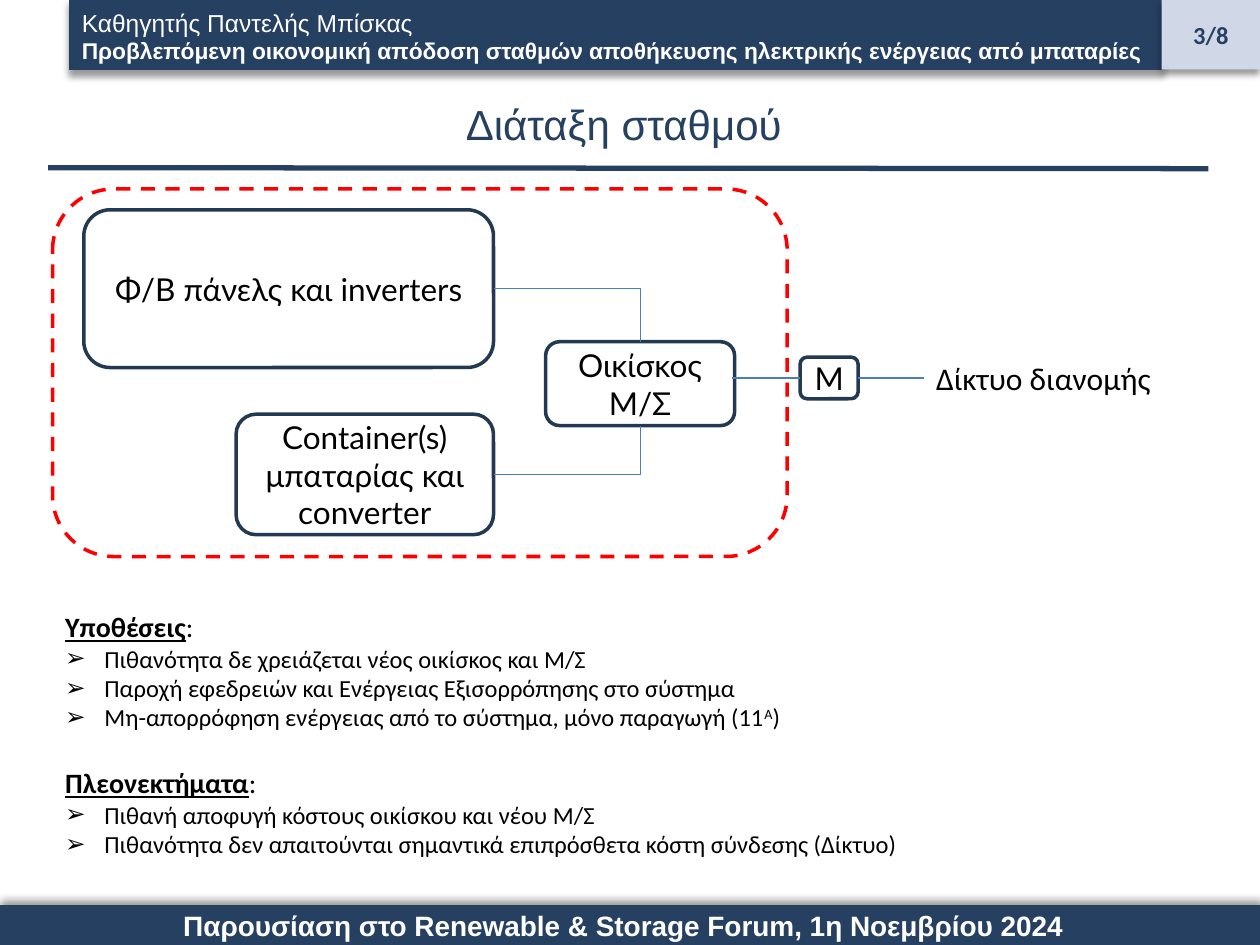
import dataclasses

import lxml.etree
import pptx
import pptx.dml.color
import pptx.enum.dml
import pptx.enum.shapes
import pptx.enum.text
import pptx.oxml.ns
import pptx.util

Cm = pptx.util.Cm
Pt = pptx.util.Pt
SHAPES = pptx.enum.shapes.MSO_SHAPE
CONNECTORS = pptx.enum.shapes.MSO_CONNECTOR
ALIGN = pptx.enum.text.PP_ALIGN
ANCHOR = pptx.enum.text.MSO_ANCHOR
TOP, LEFT, BOTTOM, RIGHT = range(4)  # connection sites of a rectangle


@dataclasses.dataclass(frozen=True)
class Theme:
    navy: str = "254061"
    outline: str = "233953"
    wire: str = "4B7EBC"
    pale: str = "D0D8E8"
    boundary: str = "FF0000"
    white: str = "FFFFFF"
    black: str = "000000"
    heading_font: str = "Arial"
    body_font: str = "Calibri"
    box_font: str = "Lato"
    title_size: int = 24
    box_size: int = 18
    heading_size: int = 16
    small_size: int = 14
    subject_size: int = 13


def rgb(value):
    return pptx.dml.color.RGBColor.from_string(value)


def add_element(parent, tag, **attributes):
    element = lxml.etree.SubElement(parent, pptx.oxml.ns.qn(tag))
    for name, value in attributes.items():
        element.set(name, str(value))
    return element


class SlideBuilder:
    def __init__(self, slide, theme):
        self.slide = slide
        self.theme = theme

    def span(self, para, text, size, font, color, bold=False, underline=False, raised=False):
        span = para.add_run()
        span.text = text
        span.font.size = Pt(size)
        span.font.name = font
        span.font.color.rgb = rgb(color)
        span.font.bold = bold
        span.font.underline = underline
        if raised:
            span.font._element.set("baseline", "30000")

    def shape(self, kind, place, fill=None, line=None, width=2):
        shape = self.slide.shapes.add_shape(kind, *map(Cm, place))
        shape.shadow.inherit = False
        if fill:
            shape.fill.solid()
            shape.fill.fore_color.rgb = rgb(fill)
        else:
            shape.fill.background()
        if line:
            shape.line.color.rgb = rgb(line)
            shape.line.width = Pt(width)
        else:
            shape.line.fill.background()
        frame = shape.text_frame
        frame.word_wrap = True
        frame.vertical_anchor = ANCHOR.MIDDLE
        frame.paragraphs[0].alignment = ALIGN.CENTER
        return shape

    def band(self, place, fill, line=None, shadow_angle=90):
        band = self.shape(SHAPES.RECTANGLE, place, fill, line, 0.75)
        effects = band._element.spPr.find(pptx.oxml.ns.qn("a:effectLst"))
        shadow = add_element(effects, "a:outerShdw", blurRad=Pt(4), dist=Pt(3),
                             dir=shadow_angle * 60000, rotWithShape=0)
        color = add_element(shadow, "a:srgbClr", val=self.theme.black)
        add_element(color, "a:alpha", val=40000)
        return band.text_frame

    def block(self, place, text):
        block = self.shape(SHAPES.ROUNDED_RECTANGLE, place, line=self.theme.outline)
        self.span(block.text_frame.paragraphs[0], text, self.theme.box_size,
                  self.theme.box_font, self.theme.black)
        return block

    def line(self, start, end, color, width=0.75, kind=CONNECTORS.STRAIGHT):
        line = self.slide.shapes.add_connector(kind, *map(Cm, start + end))
        line.line.color.rgb = rgb(color)
        line.line.width = Pt(width)
        add_element(line._element.spPr, "a:effectLst")
        return line

    def wire(self, source, source_site, target, target_site, bent=False):
        kind = CONNECTORS.ELBOW if bent else CONNECTORS.STRAIGHT
        wire = self.line((0, 0), (1, 1), self.theme.wire, kind=kind)
        wire.begin_connect(source, source_site)
        wire.end_connect(target, target_site)
        if bent:
            geometry = wire._element.spPr.find(pptx.oxml.ns.qn("a:prstGeom"))
            geometry.set("prst", "bentConnector2")

    def place(self, box, place):
        box.left, box.top, box.width, box.height = map(Cm, place)
        box.text_frame.word_wrap = True
        box.text_frame.auto_size = pptx.enum.text.MSO_AUTO_SIZE.NONE
        return box.text_frame

    def title(self, place, text):
        frame = self.place(self.slide.shapes.title, place)
        frame.vertical_anchor = ANCHOR.MIDDLE
        para = frame.paragraphs[0]
        para.alignment = ALIGN.CENTER
        self.span(para, text, self.theme.title_size, self.theme.heading_font, self.theme.navy)

    def label(self, place, text):
        frame = self.place(self.slide.shapes.add_textbox(0, 0, 0, 0), place)
        self.span(frame.paragraphs[0], text, self.theme.box_size,
                  self.theme.body_font, self.theme.black)

    def sections(self, place, sections):
        style = self.theme
        frame = self.place(self.slide.placeholders[1], place)
        frame.vertical_anchor = ANCHOR.TOP
        for number, (heading, items) in enumerate(sections):
            para = frame.add_paragraph() if number else frame.paragraphs[0]
            self.bullet(para, None)
            para.space_before = Pt(19.5 if number else 0)
            self.span(para, heading, style.heading_size, style.body_font, style.black,
                      bold=True, underline=True)
            self.span(para, ":", style.heading_size, style.body_font, style.black)
            for item in items:
                para = frame.add_paragraph()
                self.bullet(para, "➢")
                para.space_before = Pt(0)
                for index, text in enumerate(item):
                    self.span(para, text, style.small_size, style.body_font, style.black,
                              raised=index == 1)

    def bullet(self, para, mark):
        properties = para._p.get_or_add_pPr()
        indent = Cm(0.79) if mark else 0
        properties.set("marL", str(indent))
        properties.set("indent", str(-indent))
        if mark:
            add_element(properties, "a:buFont", typeface=self.theme.heading_font)
            add_element(properties, "a:buChar", char=mark)
        else:
            add_element(properties, "a:buNone")


def main():
    deck = pptx.Presentation()
    deck.slide_width, deck.slide_height = Cm(25.4), Cm(19.05)
    theme = Theme()
    page = SlideBuilder(deck.slides.add_slide(deck.slide_layouts[1]), theme)

    # Rule under the title and footer band
    page.line((0.97, 3.38), (24.36, 3.4), theme.navy, 3)
    footer = page.band((0, 18.26, 25.4, 0.79), theme.navy, theme.navy, 270)
    footer.margin_right = Cm(0.51)
    page.span(footer.paragraphs[0], "Παρουσίαση στο Renewable & Storage Forum, 1η Νοεμβρίου 2024",
              theme.heading_size, theme.heading_font, theme.white, bold=True)

    # Header band with speaker, subject and page number
    header = page.band((1.4, 0, 22.02, 1.4), theme.navy, theme.navy)
    speaker, subject = header.paragraphs[0], header.add_paragraph()
    speaker.alignment = subject.alignment = ALIGN.LEFT
    speaker.line_spacing = 1.1
    page.span(speaker, "Καθηγητής Παντελής Μπίσκας", theme.small_size,
              theme.heading_font, theme.white)
    page.span(subject, "Προβλεπόμενη οικονομική απόδοση σταθμών αποθήκευσης "
              "ηλεκτρικής ενέργειας από μπαταρίες", theme.subject_size,
              theme.heading_font, theme.white, bold=True)
    counter = page.band((23.42, 0, 1.98, 1.4), theme.pale)
    page.span(counter.paragraphs[0], "3/8", theme.small_size, theme.body_font,
              theme.navy, bold=True)

    page.title((0, 1.65, 25.15, 1.7), "Διάταξη σταθμού")

    # Station diagram
    boundary = page.shape(SHAPES.ROUNDED_RECTANGLE, (1.06, 3.81, 14.81, 7.41),
                          line=theme.boundary)
    boundary.line.dash_style = pptx.enum.dml.MSO_LINE.DASH
    panels = page.block((1.69, 4.23, 8.26, 3.18), "Φ/Β πάνελς και inverters")
    substation = page.block((11, 6.89, 3.81, 1.69), "Οικίσκος Μ/Σ")
    battery = page.block((4.76, 8.35, 5.19, 2.43), "Container(s) μπαταρίας και converter")
    meter = page.block((16.13, 7.2, 1.17, 0.84), "M")
    page.wire(panels, RIGHT, substation, TOP, bent=True)
    page.wire(battery, RIGHT, substation, BOTTOM, bent=True)
    page.line((14.76, 7.62), (16.13, 7.62), theme.wire)
    page.line((17.3, 7.62), (18.62, 7.62), theme.wire)
    page.label((18.62, 7.11, 5.13, 1.02), "Δίκτυο διανομής")

    # Assumptions and advantages
    page.sections((1.06, 12.17, 21.17, 5.31), [
        ("Υποθέσεις", [
            ["Πιθανότητα δε χρειάζεται νέος οικίσκος και Μ/Σ"],
            ["Παροχή εφεδρειών και Ενέργειας Εξισορρόπησης στο σύστημα"],
            ["Μη-απορρόφηση ενέργειας από το σύστημα, μόνο παραγωγή (11", "Α", ")"],
        ]),
        ("Πλεονεκτήματα", [
            ["Πιθανή αποφυγή κόστους οικίσκου και νέου Μ/Σ"],
            ["Πιθανότητα δεν απαιτούνται σημαντικά επιπρόσθετα κόστη σύνδεσης (Δίκτυο)"],
        ]),
    ])

    deck.save("out.pptx")


if __name__ == "__main__":
    main()
